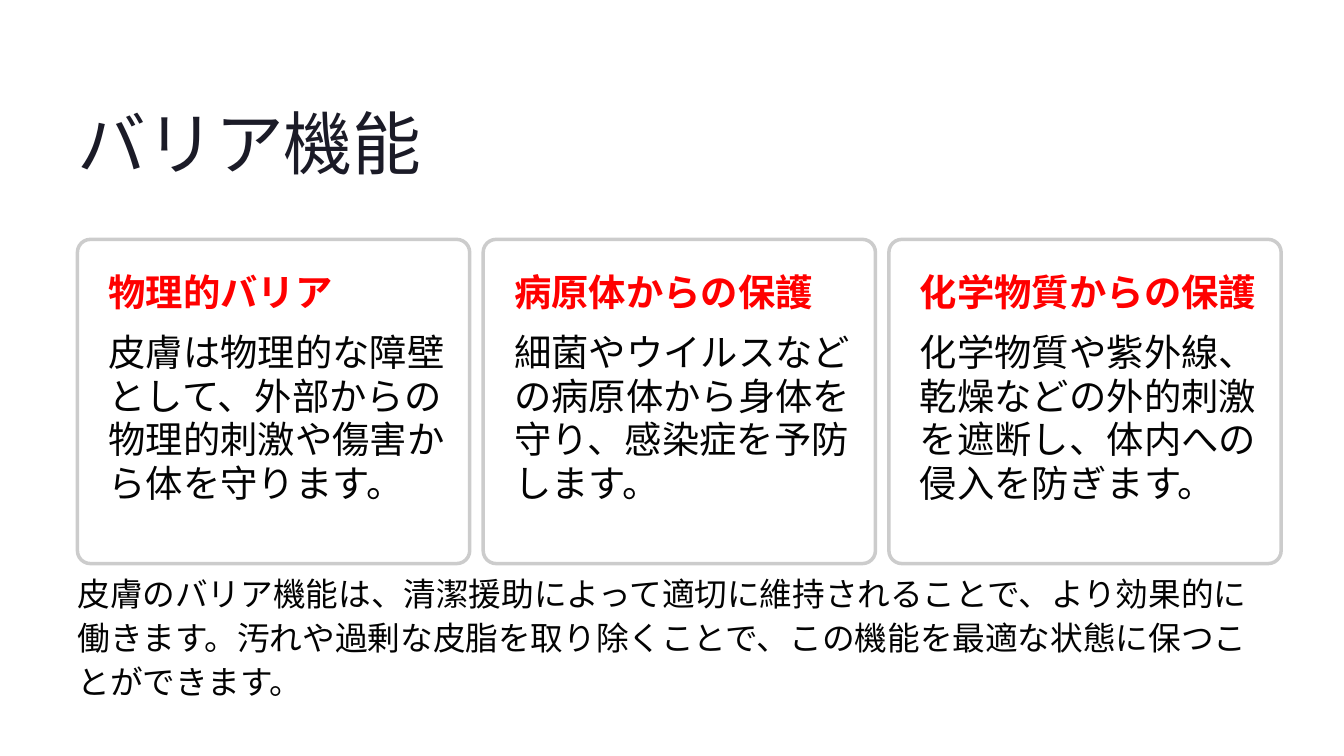
from pptx import Presentation, util as u
from pptx.dml.color import RGBColor
from pptx.enum import shapes
from pptx.oxml.ns import qn
from lxml import etree


def color(value):
    return RGBColor.from_string(value)


def add_text(s, box, words, size, font, hue, spacing, bold=False, wrap=True):
    tf = s.shapes.add_textbox(*[u.Pt(v) for v in box]).text_frame
    tf.margin_left = tf.margin_top = tf.margin_right = tf.margin_bottom = 0
    tf.word_wrap = wrap
    p = tf.paragraphs[0]
    p.text = words
    p.line_spacing = u.Pt(spacing)
    r = p.runs[0]
    r.font.size = u.Pt(size)
    r.font.name = font
    r.font.bold = bold
    r.font.color.rgb = color(hue)


prs = Presentation()
prs.slide_width, prs.slide_height = u.Pt(1152), u.Pt(648)
s = prs.slides.add_slide(prs.slide_layouts[6])

left, top = 66.4, 205.2
card_width, card_height, gap = 336.24, 277.92, 11.52
pad, text_width = 26.64, 298.08

add_text(s, (left, 83.52, 593.28, 74.16), "バリア機能", 59, "Inter", "1B1B27", 74, wrap=False)

cards = [
    ("物理的バリア", "皮膚は物理的な障壁として、外部からの物理的刺激や傷害から体を守ります。", 151.92),
    ("病原体からの保護", "細菌やウイルスなどの病原体から身体を守り、感染症を予防します。", 113.76),
    ("化学物質からの保護", "化学物質や紫外線、乾燥などの外的刺激を遮断し、体内への侵入を防ぎます。", 151.92),
]
for i, (heading, body, body_height) in enumerate(cards):
    x = left + i * (card_width + gap)
    sp = s.shapes.add_shape(shapes.MSO_SHAPE.ROUNDED_RECTANGLE,
                            u.Pt(x), u.Pt(top), u.Pt(card_width), u.Pt(card_height))
    sp.adjustments[0] = 0.04
    sp.shadow.inherit = False
    sp.fill.solid()
    sp.fill.fore_color.rgb = color("FFFFFF")
    fill = sp.fill._xPr.find(qn("a:solidFill"))
    etree.SubElement(fill[0], qn("a:alpha"), val="95000")
    sp.line.color.rgb = color("CCCCCC")
    sp.line.width = u.Pt(3)
    add_text(s, (x + pad, top + pad, text_width, 36.72), heading, 32, "Inter", "FF0000", 37,
             bold=True)
    add_text(s, (x + pad, 282.96, text_width, body_height), body, 32, "Cabin", "030303", 37.5)

add_text(s, (left, 488.16, 1018.8, 75.6),
         "皮膚のバリア機能は、清潔援助によって適切に維持されることで、より効果的に働きます。"
         "汚れや過剰な皮脂を取り除くことで、この機能を最適な状態に保つことができます。",
         28, "Cabin", "030303", 37.5)

prs.save("out.pptx")
